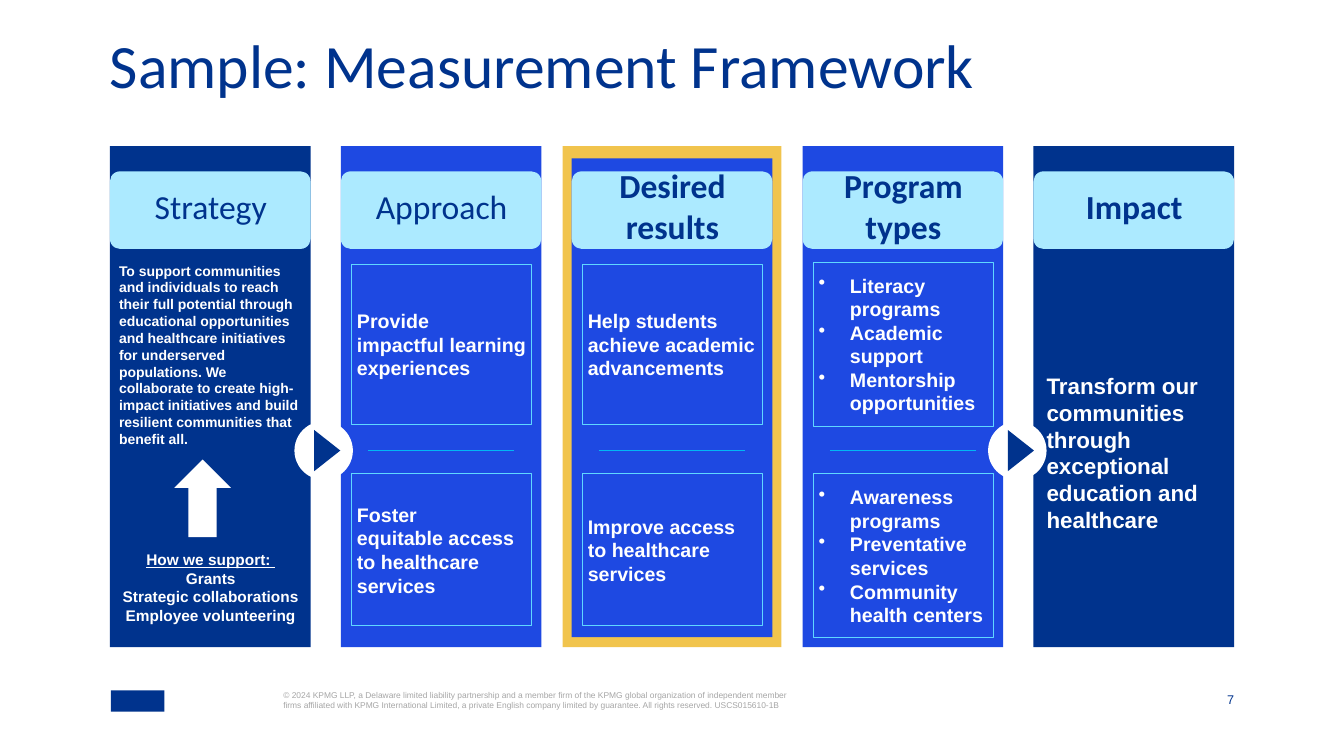
from dataclasses import dataclass

import lxml.etree
import pptx
import pptx.dml.color
import pptx.enum.shapes
import pptx.enum.text
import pptx.oxml.ns
import pptx.util

Inches = pptx.util.Inches
SHAPE = pptx.enum.shapes.MSO_SHAPE
ALIGN = pptx.enum.text.PP_ALIGN
ANCHOR = pptx.enum.text.MSO_ANCHOR

NAVY, BLUE, PALE, GOLD = "00338D", "1E49E2", "ACEAFF", "F1C44D"
WHITE, CYAN, BRIGHT_CYAN, GRAY = "FFFFFF", "60D7FF", "00B8F5", "A6A6A6"

COLUMN_LEFT, COLUMN_PITCH, COLUMN_WIDTH = 1.09, 2.29, 1.99
COLUMN_TOP, COLUMN_HEIGHT = 1.45, 4.97
CARD_OFFSET, CARD_WIDTH = 0.11, 1.78
MIDDLE = 4.47


@dataclass
class Box:
    left: float
    top: float
    width: float
    height: float


@dataclass
class TextStyle:
    size: float
    color: str = WHITE
    bold: bool = True
    font: str = "Arial"
    align: ALIGN = ALIGN.LEFT
    anchor: ANCHOR = ANCHOR.MIDDLE
    insets: tuple[float, float, float, float] = (0, 0, 0, 0)  # left, top, right, bottom
    bullets: bool = False
    line_spacing: float = 1.0


@dataclass
class Card:
    top: float
    height: float
    lines: list[str]
    bullets: bool = False


@dataclass
class Column:
    heading: str
    fill: str
    bold: bool
    cards: tuple[Card, ...] = ()
    highlighted: bool = False


COLUMNS = [
    Column("Strategy", NAVY, False),
    Column("Approach", BLUE, False, (
        Card(2.62, 1.59, ["Provide\vimpactful learning experiences"]),
        Card(4.7, 1.51, ["Foster\vequitable access to healthcare services"]))),
    Column("Desired results", BLUE, True, (
        Card(2.62, 1.59, ["Help students achieve academic advancements"]),
        Card(4.7, 1.51, ["Improve access to healthcare services"])), highlighted=True),
    Column("Program types", BLUE, True, (
        Card(2.6, 1.63, ["Literacy programs", "Academic support",
                         "Mentorship opportunities"], bullets=True),
        Card(4.7, 1.63, ["Awareness programs", "Preventative services",
                         "Community health centers"], bullets=True))),
    Column("Impact", NAVY, True),
]
STRATEGY = ("To support communities and individuals to reach their full potential through "
            "educational opportunities and healthcare initiatives for underserved populations. "
            "We collaborate to create high-impact initiatives and build resilient communities "
            "that benefit all.")
IMPACT = "Transform our communities through exceptional education and healthcare"
SUPPORT = ["How we support: ", "Grants", "Strategic collaborations", "Employee volunteering"]
COPYRIGHT = ("© 2024 KPMG LLP, a Delaware limited liability partnership and a member firm of the "
             "KPMG global organization of independent member firms affiliated with KPMG "
             "International Limited, a private English company limited by guarantee. "
             "All rights reserved. USCS015610-1B")


def rgb(color: str) -> pptx.dml.color.RGBColor:
    return pptx.dml.color.RGBColor.from_string(color)


def place(shape, box: Box) -> None:
    shape.left, shape.top = Inches(box.left), Inches(box.top)
    shape.width, shape.height = Inches(box.width), Inches(box.height)


def add_bullet(paragraph) -> None:
    properties = paragraph._p.get_or_add_pPr()
    properties.set("marL", str(Inches(0.31)))
    properties.set("indent", str(-Inches(0.31)))
    bullet = lxml.etree.SubElement(properties, pptx.oxml.ns.qn("a:buChar"))
    bullet.set("char", "•")


def write_text(shape, lines: list[str], style: TextStyle) -> None:
    frame = shape.text_frame
    frame.word_wrap = True
    frame.auto_size = pptx.enum.text.MSO_AUTO_SIZE.NONE
    frame.vertical_anchor = style.anchor
    (frame.margin_left, frame.margin_top,
     frame.margin_right, frame.margin_bottom) = map(Inches, style.insets)
    frame.text = "\n".join(lines)
    for paragraph in frame.paragraphs:
        if style.bullets:
            add_bullet(paragraph)
        paragraph.alignment = style.align
        paragraph.line_spacing = style.line_spacing
        font = paragraph.font
        font.name, font.size, font.bold = style.font, pptx.util.Pt(style.size), style.bold
        font.color.rgb = rgb(style.color)


def add_shape(slide, kind: SHAPE, box: Box, fill: str = "", line: str = ""):
    """Add a preset shape; an empty colour means no fill or no line."""
    shape = slide.shapes.add_shape(kind, 0, 0, 0, 0)
    place(shape, box)
    shape.shadow.inherit = False
    if fill:
        shape.fill.solid()
        shape.fill.fore_color.rgb = rgb(fill)
    else:
        shape.fill.background()
    if line:
        shape.line.color.rgb = rgb(line)
        shape.line.width = pptx.util.Pt(0.75)
    else:
        shape.line.fill.background()
    return shape


def add_text(slide, box: Box, lines: list[str], style: TextStyle):
    text_box = slide.shapes.add_textbox(0, 0, 0, 0)
    place(text_box, box)
    write_text(text_box, lines, style)
    return text_box


def add_divider(slide, left: float, width: float) -> None:
    line = slide.shapes.add_connector(
        pptx.enum.shapes.MSO_CONNECTOR.STRAIGHT,
        Inches(left), Inches(MIDDLE), Inches(left + width), Inches(MIDDLE))
    line.line.color.rgb = rgb(BRIGHT_CYAN)
    line.line.width = pptx.util.Pt(1)
    lxml.etree.SubElement(line._element.spPr, pptx.oxml.ns.qn("a:effectLst"))


def add_column(slide, column: Column, left: float):
    panel_box = Box(left, COLUMN_TOP, COLUMN_WIDTH, COLUMN_HEIGHT)
    if column.highlighted:
        add_shape(slide, SHAPE.RECTANGLE,
                  Box(left - 0.09, COLUMN_TOP, 2.17, COLUMN_HEIGHT), GOLD)
        panel_box = Box(left, 1.57, COLUMN_WIDTH, 4.75)
    panel = add_shape(slide, SHAPE.RECTANGLE, panel_box, column.fill)
    heading = add_shape(slide, SHAPE.ROUNDED_RECTANGLE,
                        Box(left, 1.7, COLUMN_WIDTH, 0.77), PALE)
    heading.adjustments[0] = 0.13
    write_text(heading, [column.heading],
               TextStyle(24, NAVY, column.bold, "Calibri", ALIGN.CENTER,
                         insets=(0.01, 0.01, 0, 0.1)))
    for card in column.cards:
        shape = add_shape(slide, SHAPE.RECTANGLE,
                          Box(left + CARD_OFFSET, card.top, CARD_WIDTH, card.height), line=CYAN)
        write_text(shape, card.lines,
                   TextStyle(14, insets=(0.05, 0, 0.05, 0), bullets=card.bullets))
    if column.cards:
        add_divider(slide, left + 0.27, 1.45)
    return panel


def add_play_marker(slide, center: float) -> None:
    """Draw a white disc with a triangle pointing right."""
    add_shape(slide, SHAPE.OVAL, Box(center - 0.29, MIDDLE - 0.29, 0.58, 0.58), WHITE)
    triangle = add_shape(slide, SHAPE.ISOSCELES_TRIANGLE,
                         Box(center - 0.17, MIDDLE - 0.13, 0.41, 0.26), NAVY)
    triangle.rotation = 90


def main() -> None:
    presentation = pptx.Presentation()
    presentation.slide_width, presentation.slide_height = Inches(13.33), Inches(7.5)
    slide = presentation.slides.add_slide(presentation.slide_layouts.get_by_name("Title Only"))

    title = slide.shapes.title
    place(title, Box(1.09, 0.47, 11.16, 0.58))
    write_text(title, ["Sample: Measurement Framework"],
               TextStyle(44, NAVY, False, "Calibri", anchor=ANCHOR.TOP, line_spacing=0.7))

    panels = [add_column(slide, column, COLUMN_LEFT + index * COLUMN_PITCH)
              for index, column in enumerate(COLUMNS)]
    write_text(panels[0], [STRATEGY],
               TextStyle(10, anchor=ANCHOR.TOP, insets=(0.09, 1.15, 0.08, 0)))
    write_text(panels[-1], [IMPACT], TextStyle(16, insets=(0.13, 1.11, 0, 0)))

    for center in (3.21, 10.09):
        add_play_marker(slide, center)
    add_shape(slide, SHAPE.UP_ARROW, Box(1.73, 4.56, 0.56, 0.77), WHITE)
    support = add_text(slide, Box(1.13, 5.45, 1.91, 0.75), SUPPORT,
                       TextStyle(11, align=ALIGN.CENTER, anchor=ANCHOR.TOP,
                                 insets=(0.01, 0.01, 0, 0)))
    support.text_frame.paragraphs[0].runs[0].font.underline = True

    add_shape(slide, SHAPE.RECTANGLE, Box(1.1, 6.85, 0.53, 0.21), NAVY)
    add_text(slide, Box(2.81, 6.85, 5.1, 0.2), [COPYRIGHT],
             TextStyle(6, GRAY, False, anchor=ANCHOR.TOP))
    add_text(slide, Box(11.97, 6.85, 0.27, 0.16), ["7"],
             TextStyle(9, NAVY, False, align=ALIGN.RIGHT, anchor=ANCHOR.BOTTOM))
    presentation.save("out.pptx")


if __name__ == "__main__":
    main()
